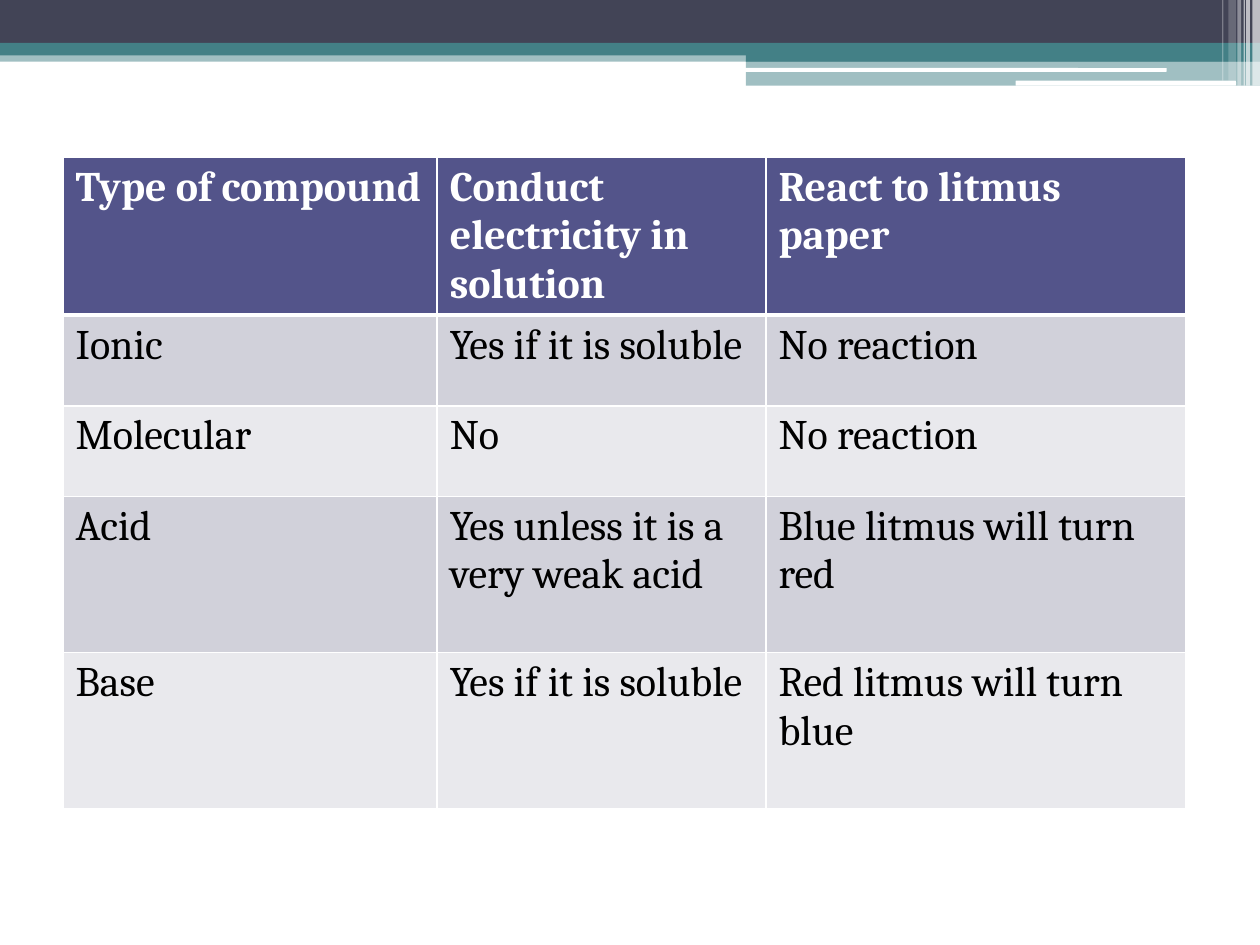
from lxml import etree
from pptx import Presentation
from pptx import util as u
from pptx.dml.color import RGBColor
from pptx.enum import shapes
from pptx.oxml import ns

NAVY = RGBColor(0x42, 0x44, 0x56)
TEAL = RGBColor(0x43, 0x80, 0x86)
WHITE = RGBColor(0xFF, 0xFF, 0xFF)
BLACK = RGBColor(0, 0, 0)
HEADER = RGBColor(0x53, 0x54, 0x8A)
BANDS = (RGBColor(0xD1, 0xD1, 0xDA), RGBColor(0xE9, 0xE9, 0xED))
FONT = "Cambria"

# The slide is a grid of 1000 columns and 750 rows
CELL = u.Inches(0.01)

# Banner parts: left, top, width, height, colour, opacity in percent
BARS = [
    (0, 40, 1000, 9, TEAL, 50),
    (0, 0, 1000, 34, NAVY, 100),
    (0, 34, 1000, 10, TEAL, 100),
    (592, 39, 408, 10, TEAL, 100),
    (592, 48, 408, 20, TEAL, 50),
]
ROUNDED_LINES = [
    (591, 54, 335, 3, WHITE, 100),
    (806, 64, 175, 4, WHITE, 100),
]
STRIPES = [
    (994, 0, 6, 68, WHITE, 65),
    (989, 0, 3, 68, WHITE, 65),
    (987, 0, 1, 68, WHITE, 60),
    (982, 0, 3, 68, WHITE, 40),
    (975, 0, 6, 64, WHITE, 20),
    (970, 0, 1, 64, WHITE, 30),
]

COLUMNS = (297, 261, 333)
ROWS = (124, 72, 72, 124, 124)
COMPOUNDS = [
    ("Type of compound", "Conduct electricity in solution", "React to litmus paper"),
    ("Ionic", "Yes if it is soluble", "No reaction"),
    ("Molecular", "No", "No reaction"),
    ("Acid", "Yes unless it is a very weak acid", "Blue litmus will turn red"),
    ("Base", "Yes if it is soluble", "Red litmus will turn blue"),
]


def write_text(frame, text, size=24, color=BLACK, bold=False):
    run = frame.paragraphs[0].add_run()
    run.text = text
    run.font.name = FONT
    run.font.size = u.Pt(size)
    run.font.bold = bold
    run.font.color.rgb = color


def add_bar(slide, kind, box, color, opacity):
    shape = slide.shapes.add_shape(kind, *(CELL * length for length in box))
    shape.shadow.inherit = False
    shape.line.fill.background()
    shape.fill.solid()
    shape.fill.fore_color.rgb = color
    if opacity < 100:
        fill_color = shape.fill._xPr.find(".//" + ns.qn("a:srgbClr"))
        etree.SubElement(fill_color, ns.qn("a:alpha"), val=str(opacity * 1000))
    return shape


def add_banner(slide, left, top):
    rectangle = shapes.MSO_SHAPE.RECTANGLE
    rounded = shapes.MSO_SHAPE.ROUNDED_RECTANGLE
    for kind, parts in ((rectangle, BARS), (rounded, ROUNDED_LINES), (rectangle, STRIPES)):
        for x, y, width, height, color, opacity in parts:
            add_bar(slide, kind, (left + x, top + y, width, height), color, opacity)


def set_borders(cell, **widths):
    properties = cell._tc.get_or_add_tcPr()
    for side in "LRTB":
        line = etree.SubElement(properties, ns.qn("a:ln" + side),
                                w=str(u.Pt(widths.get(side, 1))))
        fill = etree.SubElement(line, ns.qn("a:solidFill"))
        etree.SubElement(fill, ns.qn("a:srgbClr"), val=str(WHITE))


def add_compound_table(slide, left, top):
    frame = slide.shapes.add_table(
        len(ROWS), len(COLUMNS), CELL * left, CELL * top,
        CELL * sum(COLUMNS), CELL * sum(ROWS))
    table = frame.table
    for column, width in zip(table.columns, COLUMNS):
        column.width = CELL * width
    for index, (row, height, texts) in enumerate(zip(table.rows, ROWS, COMPOUNDS)):
        row.height = CELL * height
        is_header = index == 0
        for cell, text in zip(row.cells, texts):
            # A thick rule parts the header from the body
            set_borders(cell, B=3 if is_header else 1, T=3 if index == 1 else 1)
            cell.fill.solid()
            cell.fill.fore_color.rgb = HEADER if is_header else BANDS[(index - 1) % 2]
            write_text(cell.text_frame, text, bold=is_header,
                       color=WHITE if is_header else BLACK)


def main():
    presentation = Presentation()
    presentation.slide_width = CELL * 1000
    presentation.slide_height = CELL * 750
    slide = presentation.slides.add_slide(presentation.slide_layouts[6])
    add_banner(slide, 0, 0)
    add_compound_table(slide, 50, 125)
    presentation.save("out.pptx")


if __name__ == "__main__":
    main()
